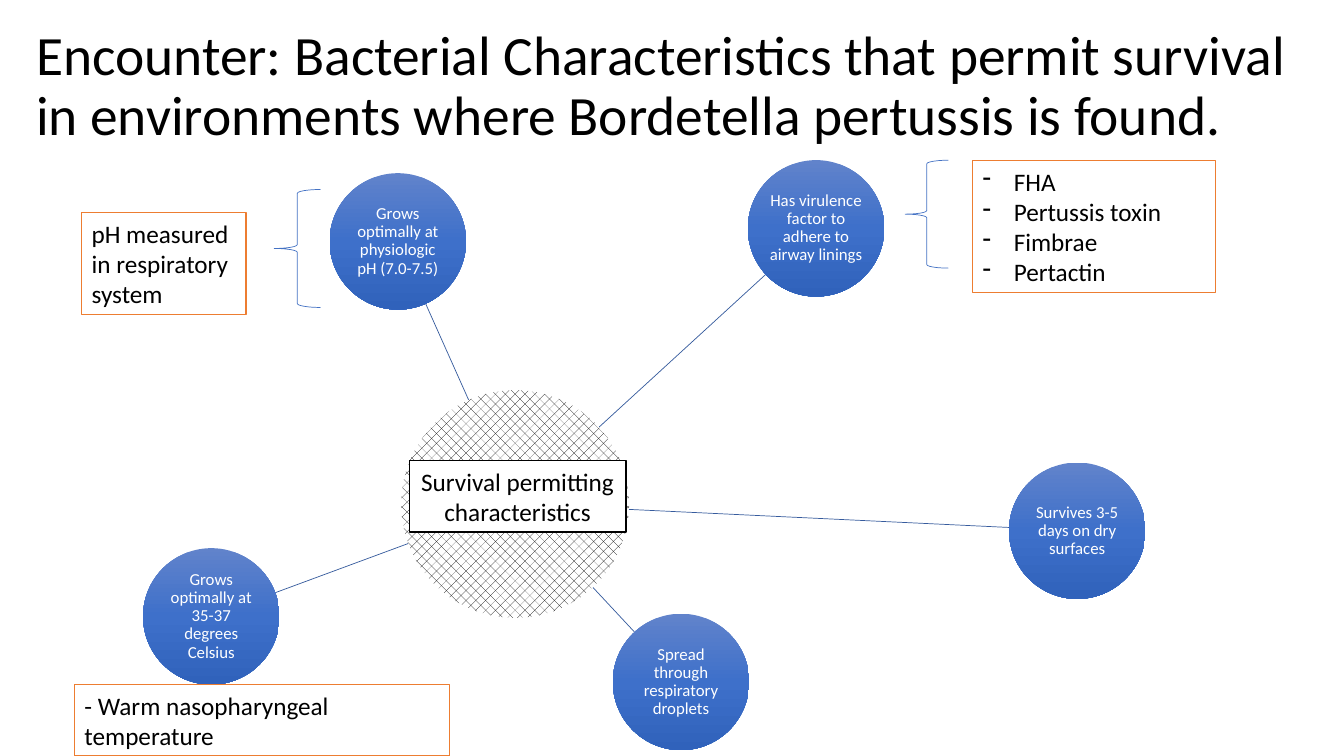
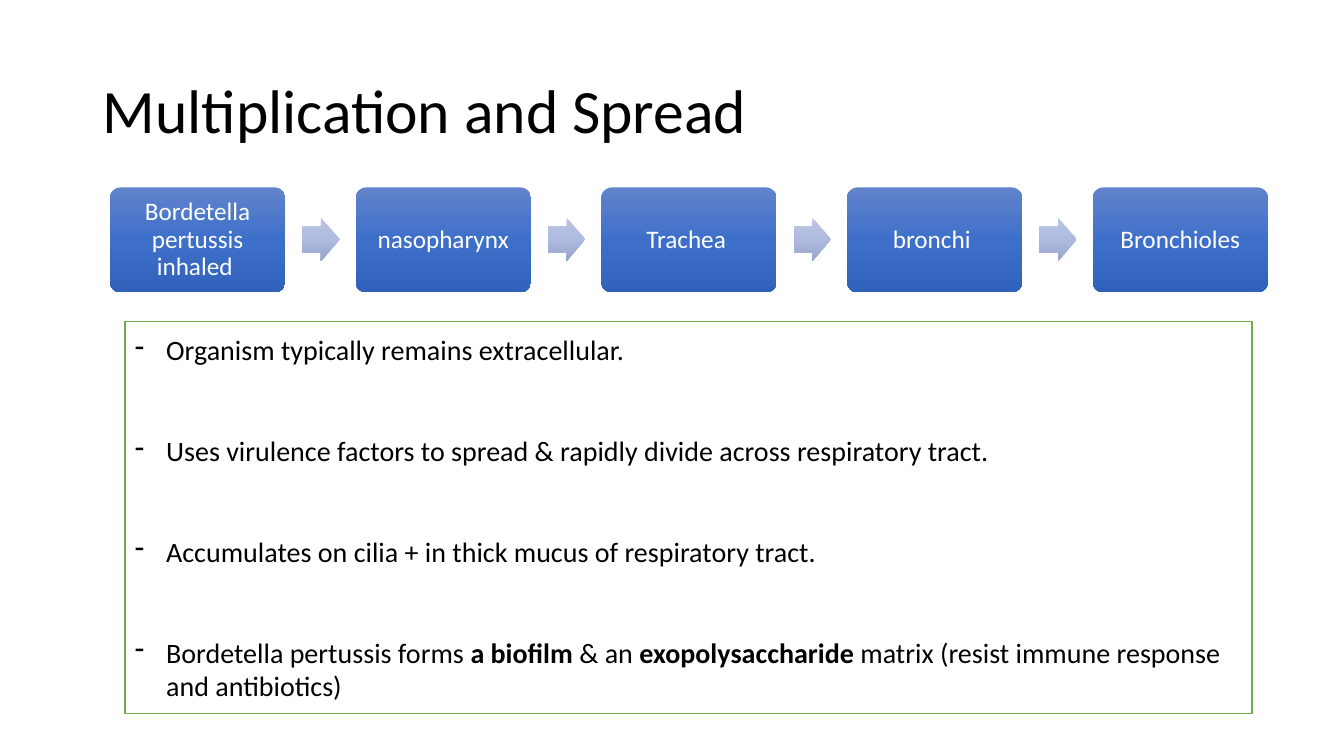
"""Build two slides on how Bordetella pertussis survives and spreads."""
from copy import deepcopy
from dataclasses import dataclass
from math import hypot

from lxml.etree import SubElement as Sub
from pptx import Presentation
from pptx.dml.color import RGBColor
from pptx.enum.dml import MSO_PATTERN
from pptx.enum.shapes import MSO_CONNECTOR as Link
from pptx.enum.shapes import MSO_SHAPE as Kind
from pptx.enum.text import MSO_ANCHOR as Anchor
from pptx.enum.text import PP_ALIGN as Align
from pptx.oxml.ns import qn
from pptx.shapes.autoshape import Shape
from pptx.slide import Slide
from pptx.util import Inches, Pt

WIDE, HIGH = Inches(13.33), Inches(7.5)
FONT = "Calibri"
BLACK, WHITE = "000000", "FFFFFF"
BLUE, ORANGE, GREEN, SPOKE = "4472C4", "ED7D31", "70AD47", "365B9D"
DEEP = ("6183CB", "3E70CA", "3062BB")
PALE = ("BBC5E3", "AEBBE0", "98A4CB")


@dataclass(frozen=True)
class Box:
    """Left, top, width and height in percent of the slide."""
    x: float
    y: float
    w: float
    h: float

    def emu(self) -> tuple[int, int, int, int]:
        """Return the box in slide units."""
        return across(self.x), down(self.y), across(self.w), down(self.h)


@dataclass(frozen=True)
class Disc:
    """Circle by its centre, and a diameter in percent of the slide's width."""
    x: float
    y: float
    size: float = 10.15
    text: str = ""

    def box(self) -> Box:
        """Return the square around the circle."""
        tall = self.size * WIDE / HIGH
        return Box(self.x - self.size / 2, self.y - tall / 2, self.size, tall)


@dataclass(frozen=True)
class Look:
    """Type settings for a block of text."""
    size: float = 18
    color: str = BLACK
    align: Align = Align.LEFT
    lead: float = 1.0
    gap: float = 0
    dash: bool = False


@dataclass(frozen=True)
class Note:
    """Outlined box with lines of text."""
    box: Box
    lines: tuple[str, ...]
    edge: str = ORANGE
    look: Look = Look()


HUB = Disc(38.33, 66.67, 16.95)
NODES = (
    Disc(29.6, 31.93, text="Grows optimally at physiologic pH (7.0-7.5)"),
    Disc(60.72, 30.2, text="Has virulence factor to adhere to airway linings"),
    Disc(80.15, 70.2, text="Survives 3-5 days on dry surfaces"),
    Disc(50.67, 90.2, text="Spread through respiratory droplets"),
    Disc(15.72, 81.53, text="Grows optimally at 35-37 degrees Celsius"),
)
BRACES = (Box(67.35, 21.2, 3.22, 14.27), Box(20.4, 25.07, 3.45, 15.6))
NOTES = (
    Note(Box(72.37, 21.2, 18.07, 17.47),
         ("FHA", "Pertussis toxin", "Fimbrae", "Pertactin"), look=Look(dash=True)),
    Note(Box(5.55, 90.53, 27.9, 9.47), ("- Warm nasopharyngeal temperature",)),
    Note(Box(6.08, 28.13, 12.22, 13.47), ("pH measured in respiratory system",)),
    Note(Box(30.45, 60.93, 16.12, 9.47), ("Survival permitting characteristics",),
         BLACK, Look(align=Align.CENTER)),
)
STEPS = ("Bordetella pertussis inhaled ", "nasopharynx", "Trachea ", "bronchi ", "Bronchioles")
STEP, PITCH = Box(8.18, 24.8, 13.05, 13.87), 18.28
ARROW = Box(22.5, 28.8, 2.77, 5.73)
FACTS = Note(Box(9.3, 42.53, 83.85, 51.87), (
    "Organism typically remains extracellular.",
    "Uses virulence factors to spread & rapidly divide across respiratory tract.",
    "Accumulates on cilia + in thick mucus of respiratory tract.",
    "Bordetella pertussis forms **a biofilm **& an **exopolysaccharide **"
    "matrix (resist immune response and antibiotics)",
), GREEN, Look(20, gap=48, dash=True))


def across(share: float) -> int:
    """Turn a percentage of the width into slide units."""
    return round(WIDE * share / 100)


def down(share: float) -> int:
    """Turn a percentage of the height into slide units."""
    return round(HIGH * share / 100)


def tint(code: str) -> RGBColor:
    """Turn a hex string into a colour."""
    return RGBColor.from_string(code)


def write(shape: Shape, lines: tuple[str, ...], look: Look, inset: float | None = None) -> None:
    """Fill a shape with paragraphs; double asterisks switch bold."""
    frame = shape.text_frame
    frame.word_wrap, frame.vertical_anchor = True, Anchor.MIDDLE
    if inset is not None:
        frame.margin_left = frame.margin_right = Inches(inset)
        frame.margin_top = frame.margin_bottom = Inches(inset)
    for i, line in enumerate(lines):
        para = frame.paragraphs[0] if i == 0 else frame.add_paragraph()
        para.alignment, para.line_spacing = look.align, look.lead
        para.space_before = Pt(look.gap if i else 0)
        if look.dash:
            props = para._p.get_or_add_pPr()
            props.set("marL", str(Inches(0.31)))
            props.set("indent", str(-Inches(0.31)))
            Sub(props, qn("a:buChar")).set("char", "-")
        font = para.font
        font.name, font.size = FONT, Pt(look.size)
        font.color.rgb = tint(look.color)
        for j, part in enumerate(line.split("**")):
            run = para.add_run()
            run.text = part
            if j % 2:
                run.font.bold = True


def draw(page: Slide, kind: Kind, box: Box, edge: str = "", width: float = 1) -> Shape:
    """Add an unfilled preset shape with an optional outline."""
    shape = page.shapes.add_shape(kind, *box.emu())
    shape.shadow.inherit = False
    shape.fill.background()
    if edge:
        shape.line.color.rgb, shape.line.width = tint(edge), Pt(width)
    else:
        shape.line.fill.background()
    return shape


def shade(shape: Shape, tones: tuple[str, str, str]) -> None:
    """Give a shape a three-stop gradient from top to bottom."""
    shape.fill.gradient()
    shape.fill.gradient_angle = 270
    stops = shape.element.spPr.find(".//" + qn("a:gsLst"))
    stops.insert(1, deepcopy(stops[0]))
    for stop, tone, place in zip(shape.fill.gradient_stops, tones, (0, 0.5, 1)):
        stop.color.rgb, stop.position = tint(tone), place


def title(page: Slide, box: Box, text: str, size: float) -> None:
    """Add the slide title."""
    write(page.shapes.add_textbox(*box.emu()), (text,), Look(size, lead=0.9))


def note(page: Slide, item: Note) -> None:
    """Add an outlined white text box."""
    shape = draw(page, Kind.RECTANGLE, item.box, item.edge)
    shape.fill.solid()
    shape.fill.fore_color.rgb = tint(WHITE)
    write(shape, item.lines, item.look)


def badge(page: Slide, kind: Kind, box: Box, text: str, size: float, inset: float) -> Shape:
    """Add a blue gradient shape with white centred text."""
    shape = draw(page, kind, box)
    shade(shape, DEEP)
    write(shape, (text,), Look(size, WHITE, Align.CENTER, 0.9), inset)
    return shape


def spoke(page: Slide, hub: Disc, node: Disc) -> None:
    """Join the rims of two circles along the line of their centres."""
    dx, dy = across(node.x - hub.x), down(node.y - hub.y)
    span = hypot(dx, dy)
    near = across(hub.size / 2) / span
    far = 1 - across(node.size / 2) / span
    ends = [round(v) for t in (near, far)
            for v in (across(hub.x) + dx * t, down(hub.y) + dy * t)]
    line = page.shapes.add_connector(Link.STRAIGHT, *ends)
    line.line.color.rgb, line.line.width = tint(SPOKE), Pt(0.5)
    Sub(line.element.spPr, qn("a:effectLst"))


def traits(page: Slide) -> None:
    """Draw the hub of survival traits."""
    title(page, Box(1.95, 1.87, 96.1, 19.33),
          "Encounter: Bacterial Characteristics that permit survival in environments "
          "where Bordetella pertussis is found.", 39.6)
    for node in NODES:
        spoke(page, HUB, node)
    fill = draw(page, Kind.OVAL, HUB.box()).fill
    fill.patterned()
    fill.pattern = MSO_PATTERN.PERCENT_30
    fill.fore_color.rgb, fill.back_color.rgb = tint(BLACK), tint(WHITE)
    for node in NODES:
        badge(page, Kind.OVAL, node.box(), node.text, 12, 0.01)
    for box in BRACES:
        draw(page, Kind.LEFT_BRACE, box, BLUE, 0.5)
    for item in NOTES:
        note(page, item)


def spread(page: Slide) -> None:
    """Draw the route through the airways and the facts below it."""
    title(page, Box(6.9, 5.33, 86.25, 19.33), "Multiplication and Spread", 44)
    for i, text in enumerate(STEPS):
        move = i * PITCH
        box = Box(STEP.x + move, STEP.y, STEP.w, STEP.h)
        badge(page, Kind.ROUNDED_RECTANGLE, box, text, 18, 0.07).adjustments[0] = 0.1
        if i < len(STEPS) - 1:
            box = Box(ARROW.x + move, ARROW.y, ARROW.w, ARROW.h)
            arrow = draw(page, Kind.RIGHT_ARROW, box)
            arrow.adjustments[0] = 0.6
            shade(arrow, PALE)
    note(page, FACTS)


def main() -> None:
    """Build and save the deck."""
    deck = Presentation()
    deck.slide_width, deck.slide_height = WIDE, HIGH
    for build in (traits, spread):
        build(deck.slides.add_slide(deck.slide_layouts[6]))
    deck.save("out.pptx")


if __name__ == "__main__":
    main()
